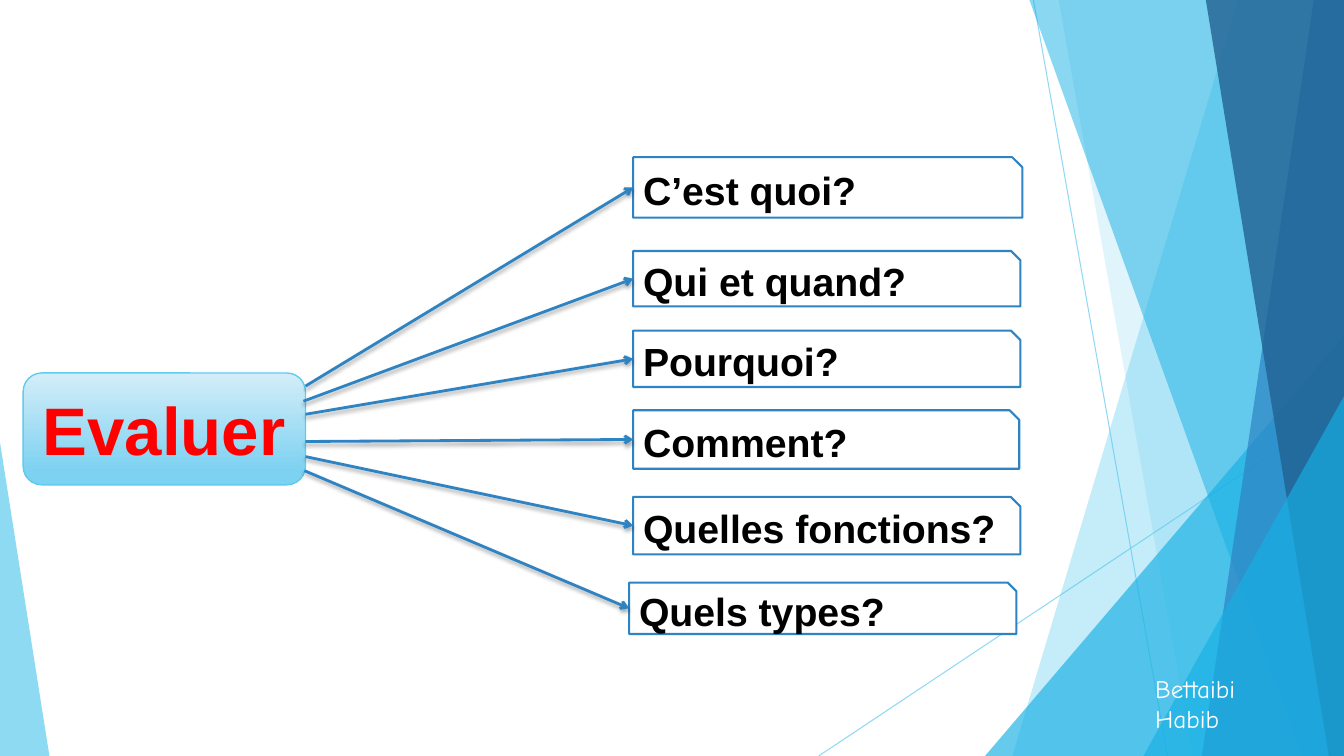
import pptx
import pptx.util
import pptx.dml.color
import pptx.enum.shapes
import pptx.enum.text
import pptx.oxml
import pptx.oxml.ns

Inches = pptx.util.Inches
Pt = pptx.util.Pt
RGBColor = pptx.dml.color.RGBColor
SHAPE = pptx.enum.shapes.MSO_SHAPE
STRAIGHT = pptx.enum.shapes.MSO_CONNECTOR.STRAIGHT
ALIGN = pptx.enum.text.PP_ALIGN
MIDDLE = pptx.enum.text.MSO_ANCHOR.MIDDLE
qn = pptx.oxml.ns.qn

WIDTH, HEIGHT = 13.33, 7.5
SKY = RGBColor(0x5F, 0xCB, 0xEF)
CYAN = RGBColor(0x17, 0xB0, 0xE4)
BLUE = RGBColor(0x2E, 0x83, 0xC3)
NAVY = RGBColor(0x22, 0x62, 0x92)
PALE = RGBColor(0xD4, 0xEE, 0xF9)
LIGHT = RGBColor(0x7D, 0xD1, 0xF1)
RED = RGBColor(0xFF, 0, 0)
BLACK = RGBColor(0, 0, 0)
WHITE = RGBColor(0xFF, 0xFF, 0xFF)

# Question, box (left, top, width, height) and arrow start, relative to the map
QUESTIONS = [
    ("C’est quoi?", (6.05, 0, 3.86, 0.6), (2.8, 2.27)),
    ("Qui et quand?", (6.05, 0.93, 3.84, 0.55), (2.78, 2.42)),
    ("Pourquoi?", (6.05, 1.72, 3.84, 0.56), (2.8, 2.55)),
    ("Comment?", (6.05, 2.51, 3.83, 0.58), (2.8, 2.82)),
    ("Quelles fonctions?", (6.05, 3.37, 3.84, 0.57), (2.8, 2.97)),
    ("Quels types?", (6.01, 4.22, 3.84, 0.51), (2.79, 3.11)),
]


def xml(text):
    return pptx.oxml.parse_xml(text.replace(
        ">", f" {pptx.oxml.ns.nsdecls('a')}>", 1))


def set_alpha(fill_parent, percent):
    color = fill_parent.find(".//" + qn("a:srgbClr"))
    color.append(xml(f'<a:alpha val="{percent * 1000}"></a:alpha>'))


def tint(sp, color, percent):
    sp.shadow.inherit = False
    sp.fill.solid()
    sp.fill.fore_color.rgb = color
    set_alpha(sp.fill._xPr, percent)
    sp.line.fill.background()


def add_line(s, x1, y1, x2, y2, color, weight, effects=""):
    line = s.shapes.add_connector(
        STRAIGHT, Inches(x1), Inches(y1), Inches(x2), Inches(y2))
    line.line.color.rgb = color
    line.line.width = Pt(weight)
    line._element.spPr.append(xml(f"<a:effectLst>{effects}</a:effectLst>"))
    return line


def add_box(s, kind, left, top, width, height, line_color, weight):
    sp = s.shapes.add_shape(
        kind, Inches(left), Inches(top), Inches(width), Inches(height))
    sp.shadow.inherit = False
    sp.line.color.rgb = line_color
    sp.line.width = Pt(weight)
    return sp


def write(sp, text, font, size, color, bold=False, align=ALIGN.LEFT):
    tf = sp.text_frame
    tf.text = text
    tf.word_wrap = True
    tf.vertical_anchor = MIDDLE
    p = tf.paragraphs[0]
    p.alignment = align
    r = p.runs[0]
    r.font.name, r.font.size, r.font.bold = font, Pt(size), bold
    r.font.color.rgb = color
    return r


def add_backdrop(s, x, y, w, h):
    right, bottom = x + w, y + h

    def band(top_left, bottom_left, color, percent):
        builder = s.shapes.build_freeform(Inches(x + top_left), Inches(y))
        builder.add_line_segments([
            (Inches(right), Inches(y)), (Inches(right), Inches(bottom)),
            (Inches(x + bottom_left), Inches(bottom))], close=True)
        tint(builder.convert_to_shape(), color, percent)

    def corner(left, width, height, peak, color, percent):
        sp = s.shapes.add_shape(
            SHAPE.ISOSCELES_TRIANGLE, Inches(x + left),
            Inches(bottom - height), Inches(width), Inches(height))
        sp.adjustments[0] = peak
        tint(sp, color, percent)

    # Thin crossing lines
    for x1, y1, x2 in ((10.25, 0, 11.58), (w, 4.03, 8.12)):
        line = add_line(s, x + x1, y + y1, x + x2, bottom, SKY, 0.75)
        set_alpha(line.line._ln, 70)

    # Overlapping bands and corner triangles, back to front
    band(12.28, 10.04, SKY, 36)
    band(10.5, 11.83, SKY, 20)
    corner(9.77, 3.56, 4.17, 1, CYAN, 66)
    band(10.21, 12.91, CYAN, 50)
    band(13.03, 11.92, BLUE, 70)
    band(11.96, 13.18, NAVY, 80)
    corner(11.34, 1.99, 3.57, 1, CYAN, 66)
    corner(0, 0.49, 3.11, 0, SKY, 70)


def add_topic(s, x, y, w, h):
    sp = add_box(s, SHAPE.ROUNDED_RECTANGLE, x, y, w, h, SKY, 1)
    sp.fill.gradient()
    sp.fill.gradient_angle = 270
    for stop, color, place in zip(sp.fill.gradient_stops, (PALE, LIGHT), (0, 0.88)):
        stop.color.rgb = color
        stop.position = place
    r = write(sp, "Evaluer", "Arial", 48, RED, True, ALIGN.CENTER)
    r._r.get_or_add_rPr().insert(0, xml(
        f'<a:ln w="{Pt(1.75)}"><a:solidFill><a:srgbClr val="{BLUE}"/>'
        '</a:solidFill></a:ln>'))


def add_question_map(s, x, y):
    add_topic(s, x, y + 2.14, 2.8, 1.11)
    shadow = (f'<a:outerShdw blurRad="{Pt(3)}" dist="{Pt(2)}" dir="5400000" '
              'rotWithShape="0"><a:srgbClr val="000000"><a:alpha val="35000"/>'
              '</a:srgbClr></a:outerShdw>')
    for text, (left, top, width, height), (start_x, start_y) in QUESTIONS:
        # Question box
        sp = add_box(s, SHAPE.SNIP_1_RECTANGLE, x + left, y + top,
                     width, height, BLUE, 1.5)
        sp.fill.solid()
        sp.fill.fore_color.rgb = WHITE
        write(sp, text, "Arial", 28, BLACK, True)
        # Arrow from the topic to the box
        arrow = add_line(s, x + start_x, y + start_y, x + left,
                         y + top + height / 2, BLUE, 2, shadow)
        arrow.end_connect(sp, 1)
        arrow.line._ln.append(xml('<a:tailEnd type="arrow"></a:tailEnd>'))


def add_author(s, x, y, w, h):
    sp = s.shapes.add_textbox(Inches(x), Inches(y), Inches(w), Inches(h))
    write(sp, "Bettaibi Habib", "Comic Neue", 18, WHITE)


def main():
    prs = pptx.Presentation()
    prs.slide_width, prs.slide_height = Inches(WIDTH), Inches(HEIGHT)
    s = prs.slides.add_slide(prs.slide_layouts[6])
    add_backdrop(s, 0, 0, WIDTH, HEIGHT)
    add_question_map(s, 0.23, 1.56)
    add_author(s, 11.36, 6.78, 1.53, 0.4)
    prs.save("out.pptx")


if __name__ == "__main__":
    main()
